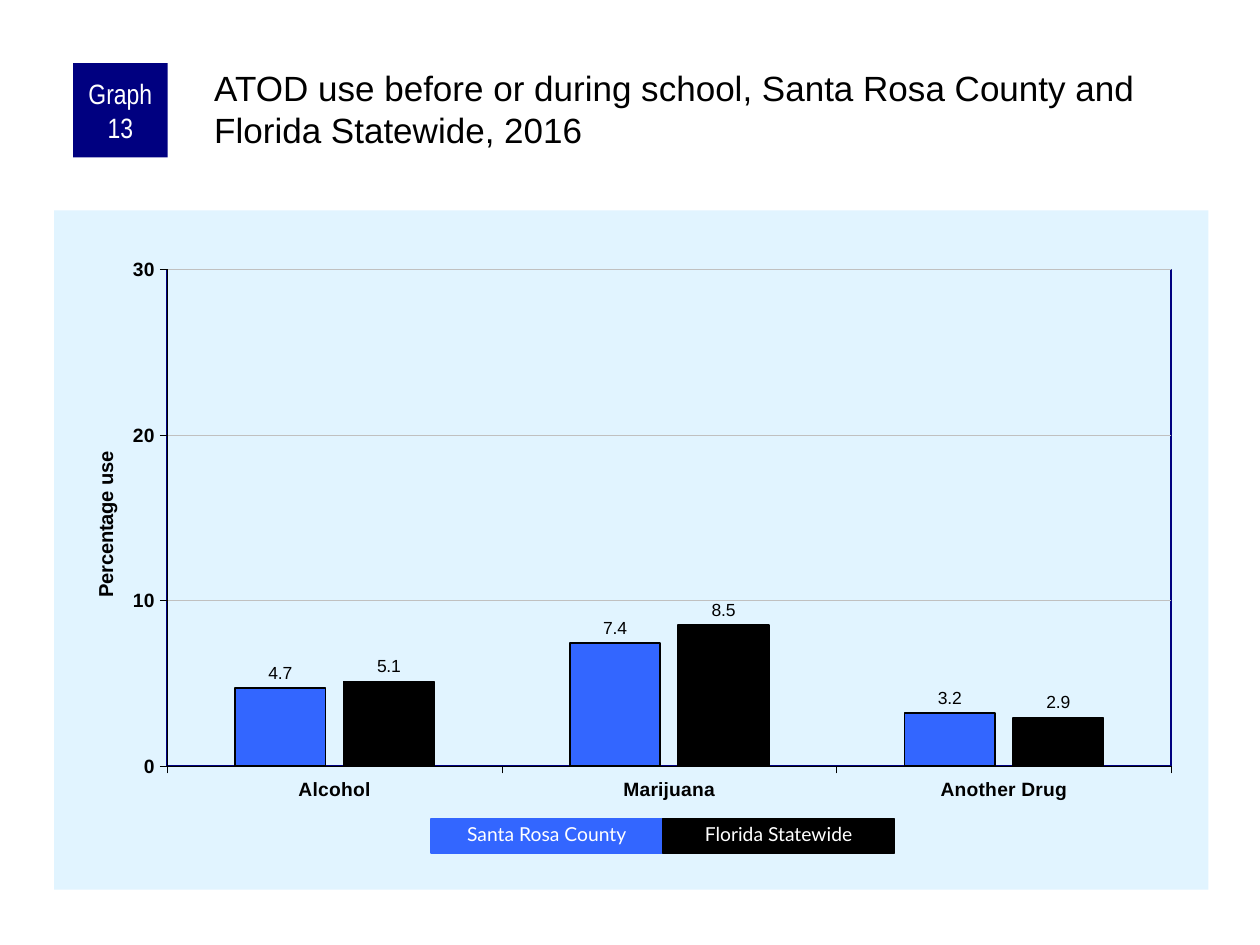
from pptx import Presentation
from pptx.chart.data import CategoryChartData
from pptx.dml.color import RGBColor
from pptx.enum.chart import XL_CHART_TYPE, XL_LABEL_POSITION, XL_TICK_MARK
from pptx.enum.shapes import MSO_SHAPE
from pptx.enum.text import MSO_ANCHOR, MSO_AUTO_SIZE, PP_ALIGN
from pptx.oxml import parse_xml
from pptx.oxml.ns import nsdecls, qn
from pptx.util import Inches, Pt

COLORS = {"navy": "000080", "county": "3366FF", "state": "000000", "panel": "E1F4FF",
          "grid": "C0C0C0", "black": "000000", "white": "FFFFFF"}
USE = {"Santa Rosa County": ("county", (4.7, 7.4, 3.2)),
       "Florida Statewide": ("state", (5.1, 8.5, 2.9))}


def rgb(name):
    """Return the named colour."""
    return RGBColor.from_string(COLORS[name])


def style_font(font, size, color, face="Arial", bold=False):
    """Set face, size, weight and colour of a font."""
    font.name, font.size, font.bold = face, Pt(size), bold
    font.color.rgb = rgb(color)


def style_line(line, color, width):
    """Set colour and width of a line."""
    line.color.rgb = rgb(color)
    line.width = Pt(width)


def add_block(slide, box, words, fill, size, face):
    """Add a filled rectangle with centred white text."""
    block = slide.shapes.add_shape(MSO_SHAPE.RECTANGLE, *map(Inches, box))
    block.shadow.inherit = False
    block.fill.solid()
    block.fill.fore_color.rgb = rgb(fill)
    block.line.fill.background()
    frame = block.text_frame
    frame.text = words
    frame.word_wrap = True
    frame.vertical_anchor = MSO_ANCHOR.MIDDLE
    frame.paragraphs[0].alignment = PP_ALIGN.CENTER
    style_font(frame.paragraphs[0].runs[0].font, size, "white", face)
    return block


def add_badge(slide, box):
    """Add the graph number."""
    frame = add_block(slide, box, "Graph 13", "navy", 16, "Arial Narrow").text_frame
    frame.margin_left = frame.margin_right = Inches(0.05)
    frame.margin_top = frame.margin_bottom = 0


def add_heading(slide, box):
    """Add the slide heading."""
    frame = slide.shapes.add_textbox(*map(Inches, box)).text_frame
    frame.word_wrap = True
    frame.margin_left = frame.margin_top = Inches(0.03)
    frame.margin_right = frame.margin_bottom = 0
    frame.text = "ATOD use before or during school, Santa Rosa County and Florida Statewide, 2016"
    style_font(frame.paragraphs[0].runs[0].font, 20, "black")


def set_layout(parent, index, target="", **places):
    """Give a chart part a manual layout from fractions of the chart."""
    for layout in parent.findall(qn("c:layout")):
        parent.remove(layout)
    modes = "".join(f'<c:{key}Mode val="edge"/>' for key in "xy")
    values = "".join(f'<c:{key} val="{value}"/>' for key, value in places.items())
    parent.insert(index, parse_xml(
        f'<c:layout {nsdecls("c")}><c:manualLayout>{target}{modes}{values}'
        '</c:manualLayout></c:layout>'))


def area_format(body):
    """Return chart shape properties holding the given fill and line."""
    return parse_xml(f'<c:spPr {nsdecls("c", "a")}>{body}</c:spPr>')


def solid(color):
    """Return the XML of a solid fill."""
    return f'<a:solidFill><a:srgbClr val="{COLORS[color]}"/></a:solidFill>'


def style_axes(chart):
    """Format both axes, the gridlines and the value title."""
    for axis in (chart.category_axis, chart.value_axis):
        axis.major_tick_mark = XL_TICK_MARK.OUTSIDE
        axis.minor_tick_mark = XL_TICK_MARK.NONE
        style_font(axis.tick_labels.font, 11, "black", bold=True)
        style_line(axis.format.line, "black", 0.25)
    percent = chart.value_axis
    percent.minimum_scale, percent.maximum_scale, percent.major_unit = 0, 30, 10
    percent.has_major_gridlines = True
    style_line(percent.major_gridlines.format.line, "grid", 0.25)
    percent.has_title = True
    title = percent.axis_title
    title.text_frame.text = "Percentage use"
    style_font(title.text_frame.paragraphs[0].runs[0].font, 11.5, "black", bold=True)
    body = title.text_frame._txBody.find(qn("a:bodyPr"))
    body.set("rot", "-5400000")
    body.set("vert", "horz")
    set_layout(title._element, 1, x=0.03, y=0.35)


def add_use_chart(slide, box):
    """Add the column chart of use by substance."""
    data = CategoryChartData(number_format="0.0")
    data.categories = ["Alcohol", "Marijuana", "Another Drug"]
    for area, (_, shares) in USE.items():
        data.add_series(area, shares)
    chart = slide.shapes.add_chart(
        XL_CHART_TYPE.COLUMN_CLUSTERED, *map(Inches, box), data).chart
    chart.has_legend = chart.has_title = False
    style_font(chart.font, 11.5, "black")
    style_axes(chart)
    chart.value_axis.tick_labels.number_format = "0"
    chart.value_axis.tick_labels.number_format_is_linked = False
    columns = chart.plots[0]
    columns.gap_width, columns.overlap, columns.vary_by_categories = 150, -20, False
    for series, (color, _) in zip(columns.series, USE.values()):
        series.format.fill.solid()
        series.format.fill.fore_color.rgb = rgb(color)
        style_line(series.format.line, "black", 1)
        labels = series.data_labels
        labels.show_value = True
        labels.number_format, labels.number_format_is_linked = "0.0", False
        labels.position = XL_LABEL_POSITION.OUTSIDE_END
        style_font(labels.font, 10, "black")
    root = chart._chartSpace.chart
    root.addnext(area_format(solid("panel") + "<a:ln><a:noFill/></a:ln>"))
    plot_area = root.plotArea
    set_layout(plot_area, 0, '<c:layoutTarget val="inner"/>', x=0.098, y=0.087, w=0.87, h=0.731)
    plot_area.append(area_format(f'<a:noFill/><a:ln w="{Pt(1)}">{solid("navy")}</a:ln>'))


def add_key(slide, box):
    """Add one colour block per area, side by side."""
    left, top, width, height = box
    step = width / len(USE)
    for index, (area, (color, _)) in enumerate(USE.items()):
        block = add_block(slide, (left + index * step, top, step, height), area, color, 11, "Lato")
        style_line(block.line, color, 0.75)
        block.text_frame.auto_size = MSO_AUTO_SIZE.SHAPE_TO_FIT_TEXT
        block.text_frame.vertical_anchor = MSO_ANCHOR.TOP
        block.text_frame.paragraphs[0].line_spacing = 0.9


def main():
    """Build and save the slide."""
    deck = Presentation()
    deck.slide_width, deck.slide_height = Inches(10), Inches(7.5)
    slide = deck.slides.add_slide(deck.slide_layouts[6])
    add_use_chart(slide, (0.43, 1.67, 9.16, 5.39))
    add_badge(slide, (0.58, 0.5, 0.75, 0.75))
    add_heading(slide, (1.67, 0.5, 7.92, 0.83))
    add_key(slide, (3.42, 6.5, 3.68, 0.27))
    deck.save("out.pptx")


if __name__ == "__main__":
    main()
